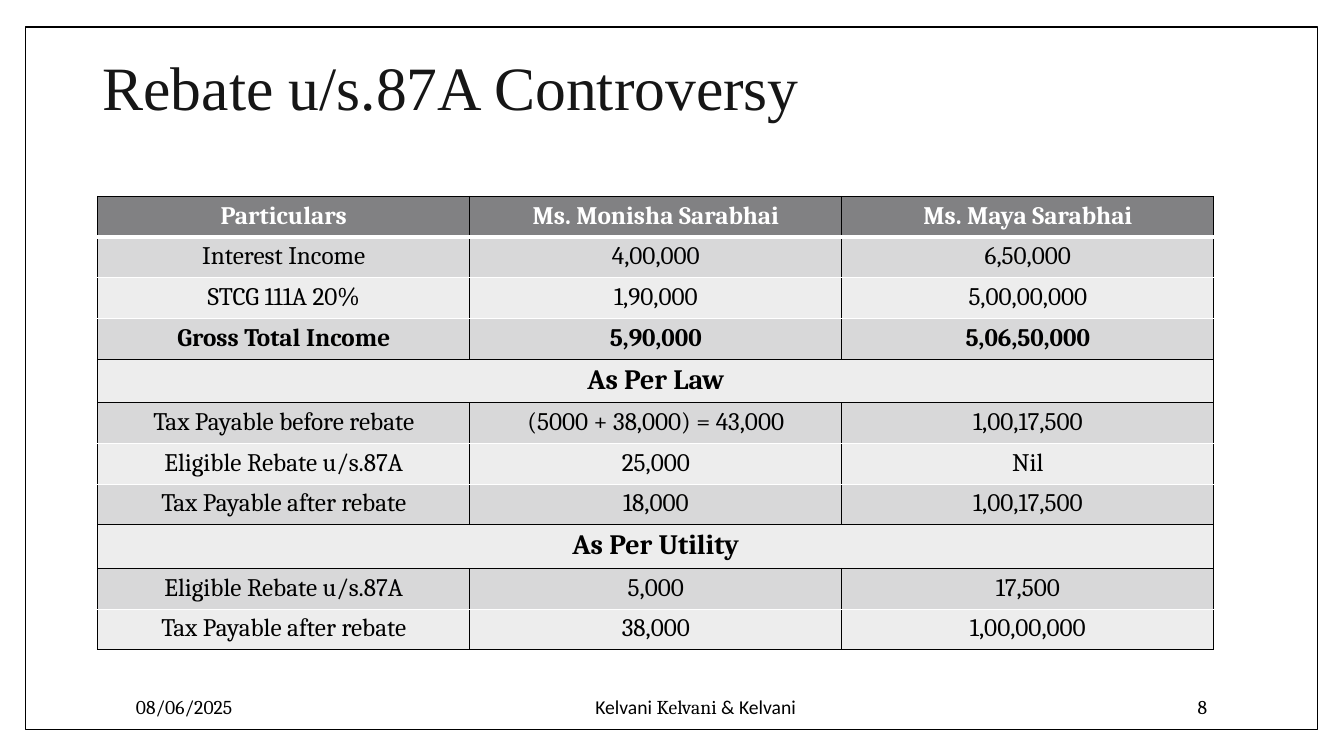
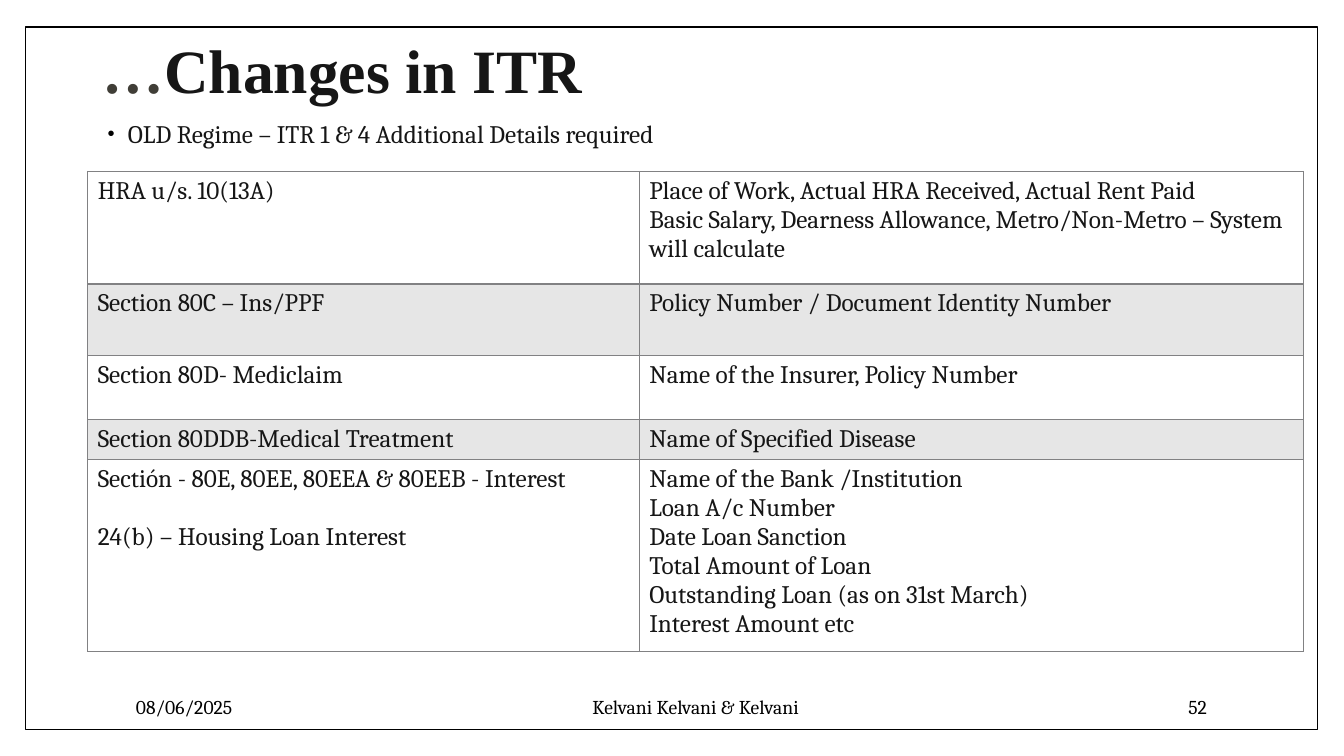
from dataclasses import dataclass

from lxml.etree import SubElement
from pptx import Presentation
from pptx.dml.color import RGBColor
from pptx.enum.shapes import MSO_SHAPE as Shape
from pptx.enum.text import MSO_ANCHOR as Anchor, PP_ALIGN as Align
from pptx.oxml import parse_xml
from pptx.oxml.ns import nsdecls, qn
from pptx.util import Inches, Pt


@dataclass(frozen=True)
class Theme:
    white: str = "FFFFFF"
    black: str = "000000"
    ink: str = "161616"
    ellipsis: str = "403E37"
    gray: str = "818183"
    dark_band: str = "D8D8D9"
    light_band: str = "EDEDED"
    tint: str = "E6E6E6"
    title_font: str = "Times New Roman"
    body_font: str = "Cambria"
    footer_font: str = "Calibri"
    title_size: int = 44
    section_size: int = 20
    body_size: int = 18
    footer_size: int = 14


THEME = Theme()
FIRM = "Kelvani Kelvani & Kelvani"

INCOME_ROWS = [
    ("Particulars", "Ms. Monisha Sarabhai", "Ms. Maya Sarabhai"),
    ("Interest Income", "4,00,000", "6,50,000"),
    ("STCG 111A 20%", "1,90,000", "5,00,00,000"),
    ("Gross Total Income", "5,90,000", "5,06,50,000"),
    ("As Per Law",),
    ("Tax Payable before rebate", "(5000 + 38,000) = 43,000", "1,00,17,500"),
    ("Eligible Rebate u/s.87A", "25,000", "Nil"),
    ("Tax Payable after rebate", "18,000", "1,00,17,500"),
    ("As Per Utility",),
    ("Eligible Rebate u/s.87A", "5,000", "17,500"),
    ("Tax Payable after rebate", "38,000", "1,00,00,000"),
]
TOTAL_ROW = 3

DETAIL_ROWS = [
    (["HRA u/s. 10(13A)"],
     ["Place of Work, Actual HRA Received, Actual Rent Paid",
      "Basic Salary, Dearness Allowance, Metro/Non-Metro – System will calculate"]),
    (["Section 80C – Ins/PPF"], ["Policy Number / Document Identity Number"]),
    (["Section 80D- Mediclaim"], ["Name of the Insurer, Policy Number"]),
    (["Section 80DDB-Medical Treatment"], ["Name of Specified Disease"]),
    (["Sectión - 80E, 80EE, 80EEA & 80EEB - Interest", "24(b) – Housing Loan Interest"],
     ["Name of the Bank /Institution", "Loan A/c Number", "Date Loan Sanction",
      "Total Amount of Loan", "Outstanding Loan (as on 31st March)", "Interest Amount etc"]),
]


def write(frame, paragraphs, font=THEME.body_font, size=THEME.body_size, color=THEME.ink,
          bold=False, align=Align.LEFT, line_spacing=None, gap=0):
    for index, content in enumerate(paragraphs):
        paragraph = frame.paragraphs[0] if index == 0 else frame.add_paragraph()
        paragraph.alignment = align
        if line_spacing:
            paragraph.line_spacing = line_spacing
        if index and gap:
            paragraph.space_before = Pt(gap)
        runs = [(content, {})] if isinstance(content, str) else content
        for text, changes in runs:
            run = paragraph.add_run()
            run.text = text
            run.font.name = changes.get("font", font)
            run.font.size = Pt(size)
            run.font.bold = bold
            run.font.color.rgb = RGBColor.from_string(changes.get("color", color))


def add_text(slide, box, paragraphs, anchor=Anchor.MIDDLE, **text_format):
    frame = slide.shapes.add_textbox(*map(Inches, box)).text_frame
    frame.word_wrap = True
    frame.vertical_anchor = anchor
    write(frame, paragraphs, **text_format)
    return frame


def add_title(slide, top, height, content, bold=False):
    add_text(slide, (0.92, top, 11.5, height), [content], font=THEME.title_font,
             size=THEME.title_size, bold=bold, line_spacing=0.9)


def add_bullet(slide, box, text):
    frame = add_text(slide, box, [text], anchor=Anchor.TOP, align=Align.JUSTIFY,
                     line_spacing=0.9)
    properties = frame.paragraphs[0]._p.get_or_add_pPr()
    properties.set("marL", str(Inches(0.25)))
    properties.set("indent", str(Inches(-0.2)))
    bullet_color = SubElement(properties, qn("a:buClr"))
    SubElement(bullet_color, qn("a:srgbClr"), val=THEME.black)
    SubElement(properties, qn("a:buSzPct"), val="80000")
    SubElement(properties, qn("a:buFont"), typeface="Arial")
    SubElement(properties, qn("a:buChar"), char="•")


def add_framed_slide(presentation, number, firm=FIRM):
    slide = presentation.slides.add_slide(presentation.slide_layouts[6])
    frame = slide.shapes.add_shape(Shape.RECTANGLE, *map(Inches, (0.25, 0.27, 12.82, 6.97)))
    frame.shadow.inherit = False
    frame.fill.solid()
    frame.fill.fore_color.rgb = RGBColor.from_string(THEME.white)
    frame.line.color.rgb = RGBColor.from_string(THEME.black)
    frame.line.width = Pt(1)
    footers = [(1.25, 2.55, "08/06/2025", Align.LEFT),
               (4.32, 5.16, firm, Align.CENTER),
               (10.2, 1.87, str(number), Align.RIGHT)]
    for left, width, content, align in footers:
        add_text(slide, (left, 6.81, width, 0.4), [content], size=THEME.footer_size,
                 color=THEME.black, align=align)
    return slide


def add_plain_table(slide, left, top, widths, heights):
    box = map(Inches, (left, top, sum(widths), sum(heights)))
    table = slide.shapes.add_table(len(heights), len(widths), *box).table
    table.first_row = table.horz_banding = False
    for column, width in zip(table.columns, widths):
        column.width = Inches(width)
    for row, height in zip(table.rows, heights):
        row.height = Inches(height)
    return table


def style_cell(cell, fill, side, top, bottom):
    if fill:
        cell.fill.solid()
        cell.fill.fore_color.rgb = RGBColor.from_string(fill)
    else:
        cell.fill.background()
    properties = cell._tc.get_or_add_tcPr()
    edges = [("lnL", side), ("lnR", side), ("lnT", top), ("lnB", bottom)]
    for index, (tag, (color, width)) in enumerate(edges):
        properties.insert(index, parse_xml(
            f'<a:{tag} {nsdecls("a")} w="{Pt(width)}"><a:solidFill>'
            f'<a:srgbClr val="{color}"/></a:solidFill></a:{tag}>'))


def add_income_table(slide):
    section_height = 0.43
    sections = [len(row) == 1 for row in INCOME_ROWS]
    row_height = (4.49 - section_height * sum(sections)) / sections.count(False)
    heights = [section_height if section else row_height for section in sections]
    table = add_plain_table(slide, 0.97, 1.95, [3.69] * 3, heights)
    black, white, thick_white = (THEME.black, 1), (THEME.white, 1), (THEME.white, 3)
    rules = [black, thick_white]
    for above, below in zip(sections[1:], sections[2:]):
        rules.append(black if above or below else white)
    rules.append(black)
    for index, values in enumerate(INCOME_ROWS):
        header, section = index == 0, sections[index]
        band = THEME.dark_band if index % 2 else THEME.light_band
        for cell in table.rows[index].cells:
            style_cell(cell, THEME.gray if header else band, black,
                       rules[index], rules[index + 1])
        if section:
            table.cell(index, 0).merge(table.cell(index, 2))
        for column, value in enumerate(values):
            write(table.cell(index, column).text_frame, [value], align=Align.CENTER,
                  size=THEME.section_size if section else THEME.body_size,
                  color=THEME.white if header else THEME.black,
                  bold=header or section or index == TOTAL_ROW)


def add_detail_table(slide):
    table = add_plain_table(slide, 0.87, 1.7, [5.47, 6.59], [1.12, 0.71, 0.63, 0.39, 1.83])
    thin, thick = (THEME.gray, 1), (THEME.gray, 2)
    last = len(DETAIL_ROWS) - 1
    for index, values in enumerate(DETAIL_ROWS):
        for column, paragraphs in enumerate(values):
            cell = table.cell(index, column)
            style_cell(cell, THEME.tint if index % 2 else None, thin,
                       thick if index == 1 else thin, thick if index == 0 else thin)
            write(cell.text_frame, paragraphs,
                  gap=21 if index == last and column == 0 else 0)


def build_rebate_slide(presentation):
    first, second, rest = FIRM.split(" ", 2)
    sans = {"font": THEME.footer_font}
    firm = [(first + " ", sans), (second, {}), (" " + rest, sans)]
    slide = add_framed_slide(presentation, 8, firm)
    add_title(slide, 0.4, 0.99, "Rebate u/s.87A Controversy")
    add_income_table(slide)


def build_changes_slide(presentation):
    slide = add_framed_slide(presentation, 52)
    add_title(slide, 0.3, 0.86, [("…", {"color": THEME.ellipsis}), ("Changes in ITR", {})],
              bold=True)
    add_bullet(slide, (0.92, 1.16, 11.5, 0.5),
               "OLD Regime – ITR 1 & 4 Additional Details required")
    add_detail_table(slide)


def main():
    presentation = Presentation()
    presentation.slide_width = Inches(13.33)
    presentation.slide_height = Inches(7.5)
    build_rebate_slide(presentation)
    build_changes_slide(presentation)
    presentation.save("out.pptx")


if __name__ == "__main__":
    main()
